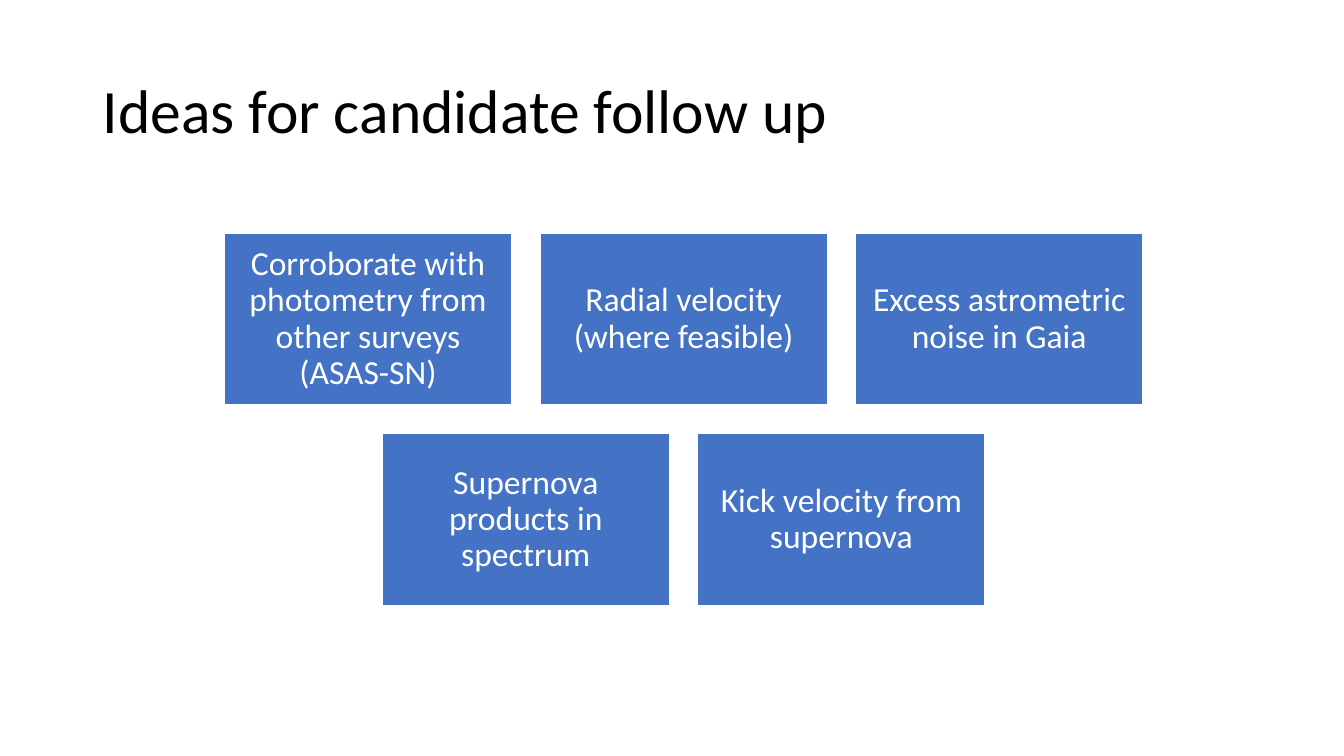
from dataclasses import dataclass

from pptx import Presentation
from pptx.dml.color import RGBColor
from pptx.enum.shapes import MSO_SHAPE
from pptx.enum.text import MSO_ANCHOR, PP_ALIGN
from pptx.util import Inches, Pt

RECTANGLE = MSO_SHAPE.RECTANGLE
MIDDLE = MSO_ANCHOR.MIDDLE
LEFT, CENTER = PP_ALIGN.LEFT, PP_ALIGN.CENTER

BLACK = RGBColor(0x00, 0x00, 0x00)
WHITE = RGBColor(0xFF, 0xFF, 0xFF)
BLUE = RGBColor(0x44, 0x72, 0xC4)

FONT = "Calibri"
CARD_W, CARD_H, GAP = 2.85, 1.71, 0.28
GRID_CENTER, GRID_TOP = 6.78, 2.31


@dataclass(frozen=True)
class Card:
    text: str
    left: float
    top: float


IDEA_ROWS = [
    [
        "Corroborate with photometry from other surveys (ASAS-SN)",
        "Radial velocity (where feasible)",
        "Excess astrometric noise in Gaia",
    ],
    ["Supernova products in spectrum", "Kick velocity from supernova"],
]


def write_text(sp, text: str, *, size: float, color: RGBColor,
               align=LEFT, inset_y: float = 0.05) -> None:
    tf = sp.text_frame
    tf.word_wrap = True
    tf.vertical_anchor = MIDDLE
    tf.margin_left = tf.margin_right = Inches(0.1)
    tf.margin_top = tf.margin_bottom = Inches(inset_y)
    p = tf.paragraphs[0]
    p.alignment = align
    p.line_spacing = 0.9
    r = p.add_run()
    r.text = text
    r.font.name = FONT
    r.font.size = Pt(size)
    r.font.color.rgb = color


def layout_cards(rows: list[list[str]]) -> list[Card]:
    cards = []
    for i, row in enumerate(rows):
        row_w = len(row) * CARD_W + (len(row) - 1) * GAP
        for j, text in enumerate(row):
            left = GRID_CENTER - row_w / 2 + j * (CARD_W + GAP)
            cards.append(Card(text, left, GRID_TOP + i * (CARD_H + GAP)))
    return cards


def draw_card(s, card: Card) -> None:
    sp = s.shapes.add_shape(RECTANGLE, Inches(card.left), Inches(card.top),
                            Inches(CARD_W), Inches(CARD_H))
    sp.shadow.inherit = False
    sp.fill.solid()
    sp.fill.fore_color.rgb = BLUE
    sp.line.color.rgb = WHITE
    sp.line.width = Pt(1)
    write_text(sp, card.text, size=24, color=WHITE, align=CENTER, inset_y=0.1)


def main() -> None:
    prs = Presentation()
    prs.slide_width, prs.slide_height = Inches(13.33), Inches(7.5)
    s = prs.slides.add_slide(prs.slide_layouts[6])
    title = s.shapes.add_textbox(Inches(0.92), Inches(0.4), Inches(11.5), Inches(1.45))
    write_text(title, "Ideas for candidate follow up", size=44, color=BLACK)
    for card in layout_cards(IDEA_ROWS):
        draw_card(s, card)
    prs.save("out.pptx")


if __name__ == "__main__":
    main()
